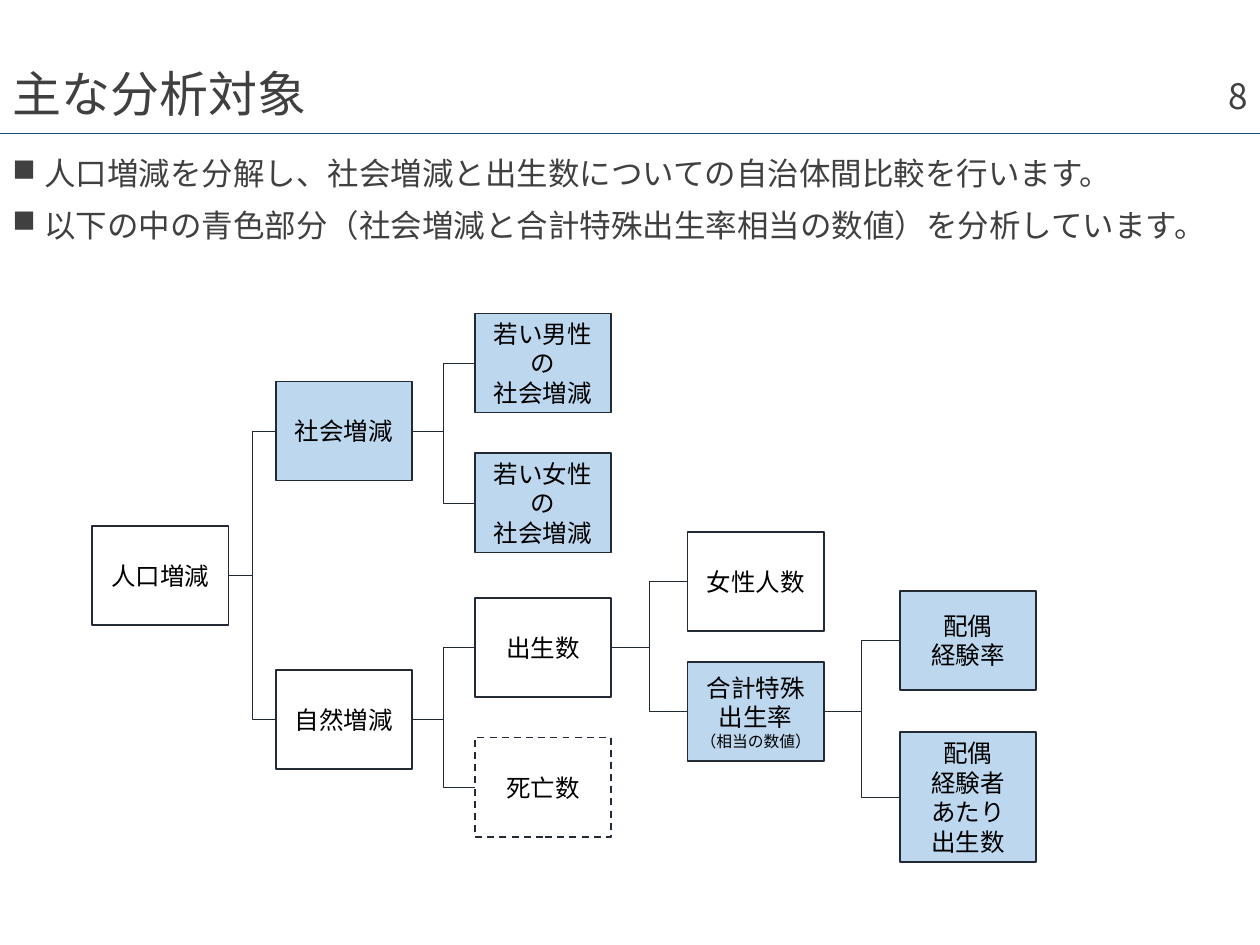
from dataclasses import dataclass

from lxml import etree
from pptx import Presentation
from pptx.dml.color import RGBColor
from pptx.enum.dml import MSO_LINE
from pptx.enum.shapes import MSO_CONNECTOR, MSO_SHAPE
from pptx.enum.text import MSO_ANCHOR, MSO_AUTO_SIZE, PP_ALIGN
from pptx.oxml.ns import qn
from pptx.util import Cm, Pt

ELBOW, STRAIGHT = MSO_CONNECTOR.ELBOW, MSO_CONNECTOR.STRAIGHT
RECTANGLE = MSO_SHAPE.RECTANGLE
DASH = MSO_LINE.DASH
MIDDLE, TOP = MSO_ANCHOR.MIDDLE, MSO_ANCHOR.TOP
LEFT, CENTER, RIGHT = PP_ALIGN.LEFT, PP_ALIGN.CENTER, PP_ALIGN.RIGHT
NO_AUTOFIT = MSO_AUTO_SIZE.NONE
TITLE_ONLY = 5
LEFT_SITE, RIGHT_SITE = 1, 3


@dataclass(frozen=True)
class Theme:
    font: str = "Noto Sans CJK JP"
    text: RGBColor = RGBColor(0x40, 0x40, 0x40)
    box_text: RGBColor = RGBColor(0, 0, 0)
    plain: RGBColor = RGBColor(0xFF, 0xFF, 0xFF)
    analysed: RGBColor = RGBColor(0xBD, 0xD7, 0xEE)
    outline: RGBColor = RGBColor(0x22, 0x2A, 0x35)
    rule: RGBColor = RGBColor(0x1F, 0x4E, 0x79)
    title_size: int = 28
    number_size: int = 20
    body_size: int = 18
    box_size: int = 14
    note_size: int = 9
    box_line: float = 1
    thin_line: float = 0.5


THEME = Theme()
SLIDE_WIDTH, SLIDE_HEIGHT = 25.4, 19.05
BOX_WIDTH, BOX_HEIGHT, TALL_HEIGHT = 2.75, 2.0, 2.62
COLUMNS = (1.86, 5.56, 9.57, 13.86, 18.14)

BULLETS = (
    "人口増減を分解し、社会増減と出生数についての自治体間比較を行います。",
    "以下の中の青色部分（社会増減と合計特殊出生率相当の数値）を分析しています。",
)

# name: (column, top, lines, fill)
BOXES = {
    "population": (0, 10.6, ["人口増減"], THEME.plain),
    "social": (1, 7.69, ["社会増減"], THEME.analysed),
    "natural": (1, 13.51, ["自然増減"], THEME.plain),
    "young men": (2, 6.32, ["若い男性の", "社会増減"], THEME.analysed),
    "young women": (2, 9.14, ["若い女性の", "社会増減"], THEME.analysed),
    "births": (2, 12.05, ["出生数"], THEME.plain),
    "deaths": (2, 14.87, ["死亡数"], THEME.plain),
    "women": (3, 10.72, ["女性人数"], THEME.plain),
    "fertility": (3, 13.35, ["合計特殊", "出生率", "（相当の数値）"], THEME.analysed),
    "marriage": (4, 11.91, ["配偶", "経験率"], THEME.analysed),
    "marital births": (4, 14.76, ["配偶", "経験者", "あたり", "出生数"], THEME.analysed),
}

BRANCHES = {
    "population": ("social", "natural"),
    "social": ("young men", "young women"),
    "natural": ("births", "deaths"),
    "births": ("women", "fertility"),
    "fertility": ("marriage", "marital births"),
}


def format_paragraph(paragraph, size, color, alignment=LEFT):
    paragraph.alignment = alignment
    font = paragraph.font
    font.size = Pt(size)
    font.color.rgb = color
    font.name = THEME.font
    properties = paragraph._p.get_or_add_pPr().find(qn("a:defRPr"))
    etree.SubElement(properties, qn("a:ea"), typeface=THEME.font)


def fill_text(shape, lines, size, color, alignment=LEFT, anchor=MIDDLE):
    frame = shape.text_frame
    frame.word_wrap = True
    frame.auto_size = NO_AUTOFIT
    frame.vertical_anchor = anchor
    frame.text = "\n".join(lines)
    for paragraph in frame.paragraphs:
        format_paragraph(paragraph, size, color, alignment)
    return frame.paragraphs


def add_title(slide, text):
    title = slide.shapes.title
    title.left, title.top = Cm(0), Cm(1.57)
    title.width, title.height = Cm(SLIDE_WIDTH), Cm(0.74)
    paragraph = fill_text(title, [text], THEME.title_size, THEME.text)[0]
    paragraph.line_spacing = 0.9


def add_page_number(slide, text):
    box = slide.shapes.add_textbox(Cm(19.69), Cm(1.42), Cm(5.71), Cm(1.02))
    fill_text(box, [text], THEME.number_size, THEME.text, RIGHT)


def add_bullets(slide, lines):
    box = slide.shapes.add_textbox(Cm(0), Cm(3.07), Cm(SLIDE_WIDTH), Cm(4.83))
    for paragraph in fill_text(box, lines, THEME.body_size, THEME.text, anchor=TOP):
        paragraph.line_spacing = 0.9
        paragraph.space_before = Pt(10)
        properties = paragraph._p.get_or_add_pPr()
        properties.set("marL", str(Cm(0.64)))
        properties.set("indent", str(Cm(-0.64)))
        bullet = etree.Element(qn("a:buChar"), char="■")
        properties.find(qn("a:defRPr")).addprevious(bullet)


def add_box(slide, column, top, lines, fill):
    height = TALL_HEIGHT if len(lines) > 3 else BOX_HEIGHT
    box = slide.shapes.add_shape(
        RECTANGLE, Cm(COLUMNS[column]), Cm(top), Cm(BOX_WIDTH), Cm(height))
    box.shadow.inherit = False
    box.fill.solid()
    box.fill.fore_color.rgb = fill
    box.line.color.rgb = THEME.outline
    box.line.width = Pt(THEME.box_line)
    fill_text(box, lines, THEME.box_size, THEME.box_text, CENTER)
    return box


def add_line(slide, kind, color, start=(0, 0), end=(0, 0)):
    points = [Cm(value) for value in (*start, *end)]
    line = slide.shapes.add_connector(kind, *points)
    line.line.color.rgb = color
    line.line.width = Pt(THEME.thin_line)
    etree.SubElement(line._element.spPr, qn("a:effectLst"))
    return line


def add_branch(slide, parent, child):
    branch = add_line(slide, ELBOW, THEME.outline)
    branch.begin_connect(parent, RIGHT_SITE)
    branch.end_connect(child, LEFT_SITE)


def main():
    presentation = Presentation()
    presentation.slide_width = Cm(SLIDE_WIDTH)
    presentation.slide_height = Cm(SLIDE_HEIGHT)
    slide = presentation.slides.add_slide(presentation.slide_layouts[TITLE_ONLY])

    add_line(slide, STRAIGHT, THEME.rule, (0, 2.69), (SLIDE_WIDTH, 2.69))
    add_title(slide, "主な分析対象")
    add_page_number(slide, "8")
    add_bullets(slide, BULLETS)

    boxes = {name: add_box(slide, *box) for name, box in BOXES.items()}
    boxes["deaths"].line.dash_style = DASH
    boxes["fertility"].text_frame.paragraphs[-1].font.size = Pt(THEME.note_size)
    for parent, children in BRANCHES.items():
        for child in children:
            add_branch(slide, boxes[parent], boxes[child])

    presentation.save("out.pptx")


if __name__ == "__main__":
    main()
